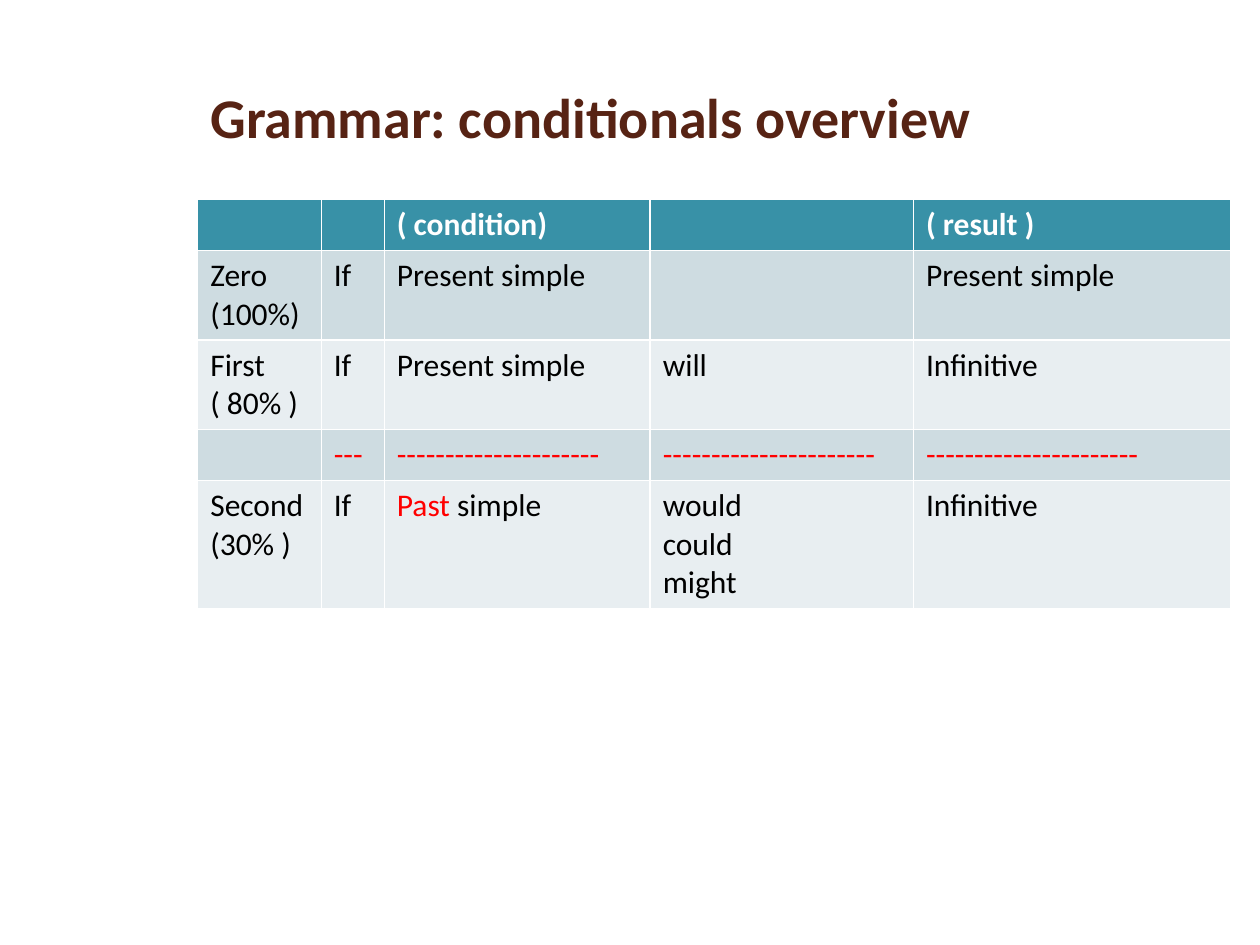
from pptx import Presentation
from pptx.dml.color import RGBColor
from pptx.enum.text import MSO_ANCHOR, PP_ALIGN
from pptx.util import Pt

BROWN = RGBColor(0x57, 0x23, 0x14)
TEAL = RGBColor(0x38, 0x91, 0xA7)
BAND_DARK = RGBColor(0xCE, 0xDC, 0xE1)
BAND_LIGHT = RGBColor(0xE8, 0xEE, 0xF1)
WHITE = RGBColor(0xFF, 0xFF, 0xFF)
BLACK = RGBColor(0, 0, 0)
RED = RGBColor(0xFF, 0, 0)
FONT = "Calibri"

COLUMN_WIDTHS = (70.6, 36, 152, 150.4, 181.4)
ROW_HEIGHTS = (29.2, 51, 51, 29.2, 72.6)
DIVIDER_ROW = 3
ROWS = (
    ("", "", "( condition)", "", "( result )"),
    ("Zero\n(100%)", "If", "Present simple", "", "Present simple"),
    ("First\n( 80% )", "If", "Present simple", "will", "Infinitive"),
    ("", "-" * 3, "-" * 21, "-" * 22, "-" * 22),
    ("Second (30% )", "If", "Past simple", "would\ncould\nmight", "Infinitive"),
)


def set_font(font, size, color, bold):
    font.name = FONT
    font.size = Pt(size)
    font.bold = bold
    font.color.rgb = color


def add_title(page, text, left, top, width, height):
    title = page.shapes.title
    title.left, title.top = Pt(left), Pt(top)
    title.width, title.height = Pt(width), Pt(height)
    frame = title.text_frame
    frame.text = text
    frame.word_wrap = True
    frame.vertical_anchor = MSO_ANCHOR.MIDDLE
    para = frame.paragraphs[0]
    para.alignment = PP_ALIGN.LEFT
    set_font(para.font, 32, BROWN, True)


def row_colors(row):
    """Return the fill and text colours of a row."""
    if row == 0:
        return TEAL, WHITE
    fill = BAND_DARK if row % 2 else BAND_LIGHT
    return fill, RED if row == DIVIDER_ROW else BLACK


def highlight_first_word(para):
    first, rest = para.text.split(" ", 1)
    para.clear()
    span = para.add_run()
    span.text = first + " "
    span.font.color.rgb = RED
    para.add_run().text = rest


def add_conditionals_table(page, left, top, width, height):
    table = page.shapes.add_table(
        len(ROWS), len(COLUMN_WIDTHS), Pt(left), Pt(top), Pt(width), Pt(height)
    ).table
    for column, column_width in zip(table.columns, COLUMN_WIDTHS):
        column.width = Pt(column_width)
    for row, texts in enumerate(ROWS):
        table.rows[row].height = Pt(ROW_HEIGHTS[row])
        fill, color = row_colors(row)
        for column, text in enumerate(texts):
            cell = table.cell(row, column)
            cell.fill.solid()
            cell.fill.fore_color.rgb = fill
            cell.text = text
            for para in cell.text_frame.paragraphs:
                set_font(para.font, 18, color, row == 0)
    highlight_first_word(table.cell(4, 2).text_frame.paragraphs[0])


def main():
    deck = Presentation()
    deck.slide_width, deck.slide_height = Pt(720), Pt(540)
    page = deck.slides.add_slide(deck.slide_layouts[5])
    left, width = 113, sum(COLUMN_WIDTHS)
    add_title(page, "Grammar: conditionals overview", left, 21.6, width, 90)
    add_conditionals_table(page, left, 113.8, width, sum(ROW_HEIGHTS))
    deck.save("out.pptx")


if __name__ == "__main__":
    main()
